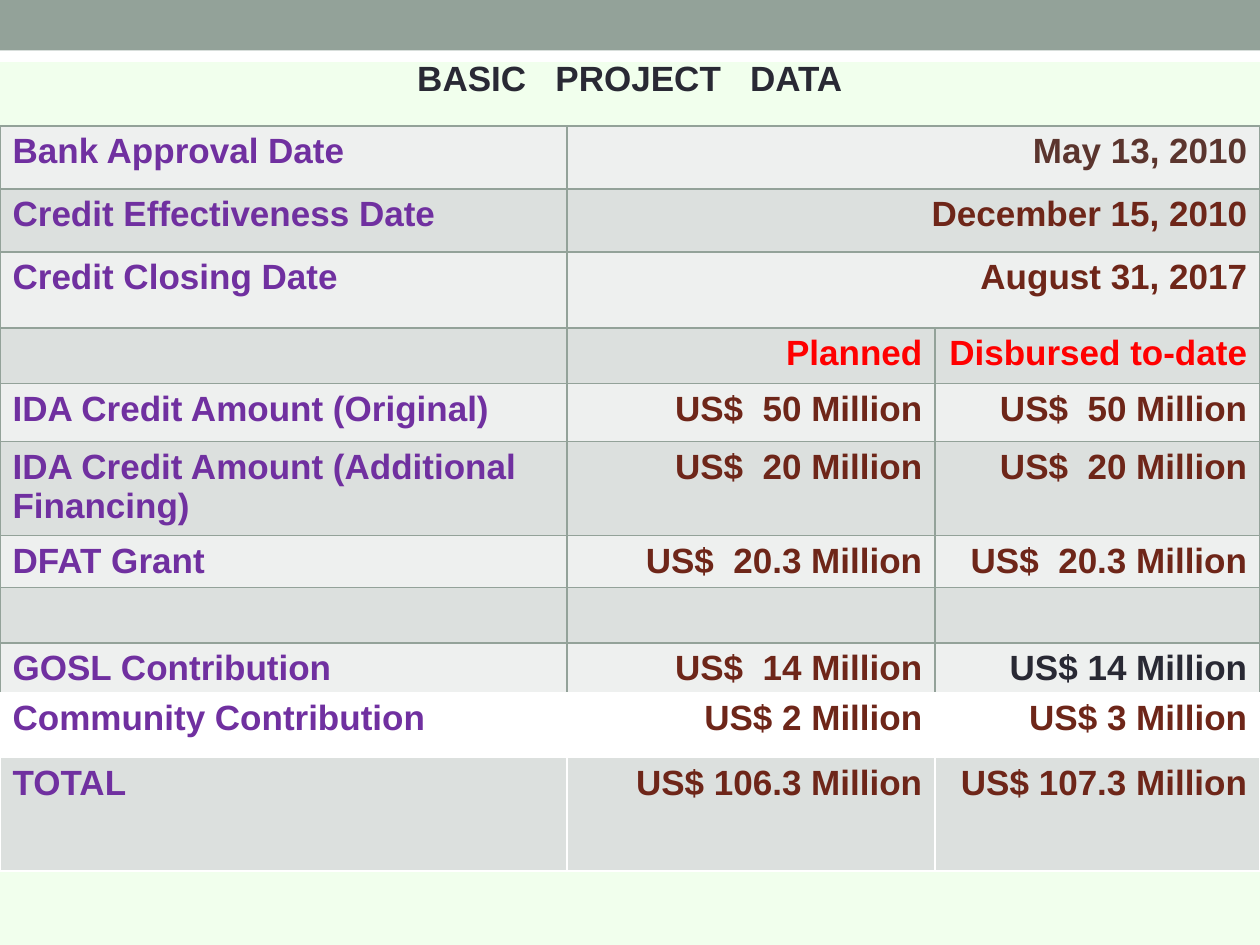
from dataclasses import dataclass

from lxml.etree import SubElement
from pptx import Presentation
from pptx.dml.color import RGBColor
from pptx.enum.shapes import MSO_SHAPE as Preset
from pptx.enum.text import PP_ALIGN as Align
from pptx.oxml.ns import qn
from pptx.slide import Slide
from pptx.util import Cm, Pt

PURPLE, BROWN, RED, INK = "7030A0", "6E2619", "FF0000", "292934"
SAGE, WHITE, LIGHT, DARK = "93A299", "FFFFFF", "EEF0EF", "DCE0DE"
PAGE_WIDTH, PAGE_HEIGHT = 25.4, 19.05
COLUMN_WIDTHS = (11.43, 7.42, 6.55)


@dataclass
class Row:
    height: float
    texts: tuple[str, ...]
    fill: str
    colors: tuple[str, ...] = (PURPLE, BROWN, BROWN)


@dataclass
class Band:
    top: float
    height: float
    color: str


BANDS = (Band(0.61, 0.64, WHITE), Band(0, 1.02, SAGE))

PROJECT_ROWS = (
    Row(1.27, ("Bank Approval Date", "May 13, 2010"), LIGHT, (PURPLE, "5B352E")),
    Row(1.27, ("Credit Effectiveness Date", "December 15, 2010"), DARK),
    Row(1.53, ("Credit Closing Date", "August 31, 2017"), LIGHT),
    Row(1.04, ("", "Planned", "Disbursed to-date"), DARK, (PURPLE, RED, RED)),
    Row(1.17, ("IDA Credit Amount (Original)", "US$  50 Million", "US$  50 Million"), LIGHT),
    Row(1.9, ("IDA Credit Amount (Additional Financing)", "US$  20 Million", "US$  20 Million"), DARK),
    Row(1.04, ("DFAT Grant", "US$  20.3 Million", "US$  20.3 Million"), LIGHT),
    Row(1.04, ("", "", ""), DARK),
    Row(2.08, ("GOSL Contribution", "US$  14 Million", "US$ 14 Million"), LIGHT, (PURPLE, BROWN, INK)),
)
TOTAL_ROWS = (
    Row(1.3, ("Community Contribution", "US$ 2 Million", "US$ 3 Million"), WHITE),
    Row(2.29, ("TOTAL", "US$ 106.3 Million", "US$ 107.3 Million"), DARK),
)


def paint(fill, color: str) -> None:
    fill.solid()
    fill.fore_color.rgb = RGBColor.from_string(color)


def write(text_frame, text: str, color: str, alignment: Align) -> None:
    text_frame.text = text
    para = text_frame.paragraphs[0]
    para.alignment = alignment
    para.font.size = Pt(20)
    for span in para.runs:
        span.font.name = "Arial"
        span.font.size = Pt(20)
        span.font.bold = True
        span.font.color.rgb = RGBColor.from_string(color)


def draw_band(page: Slide, band: Band) -> None:
    shape = page.shapes.add_shape(
        Preset.RECTANGLE, 0, Cm(band.top), Cm(PAGE_WIDTH), Cm(band.height))
    shape.shadow.inherit = False
    shape.line.fill.background()
    paint(shape.fill, band.color)


def draw_borders(cell, color: str) -> None:
    properties = cell._tc.get_or_add_tcPr()
    for side in ("a:lnL", "a:lnR", "a:lnT", "a:lnB"):
        line = SubElement(properties, qn(side), w=str(Pt(1)))
        solid = SubElement(line, qn("a:solidFill"))
        SubElement(solid, qn("a:srgbClr"), val=color)


def draw_table(page: Slide, top: float, rows: tuple[Row, ...], border: str) -> None:
    height = sum(row.height for row in rows)
    table = page.shapes.add_table(
        len(rows), len(COLUMN_WIDTHS), 0, Cm(top), Cm(PAGE_WIDTH), Cm(height)).table
    for column, width in zip(table.columns, COLUMN_WIDTHS):
        column.width = Cm(width)
    for index, row in enumerate(rows):
        table.rows[index].height = Cm(row.height)
        for cell in table.rows[index].cells:
            draw_borders(cell, border)
            paint(cell.fill, row.fill)
        if len(row.texts) == 2:
            table.cell(index, 1).merge(table.cell(index, 2))
        for position, (text, color) in enumerate(zip(row.texts, row.colors)):
            alignment = Align.RIGHT if position else Align.LEFT
            write(table.cell(index, position).text_frame, text, color, alignment)


def draw_title(page: Slide) -> None:
    box = page.shapes.add_textbox(Cm(4.34), Cm(1.02), Cm(16.72), Cm(1.11))
    box.text_frame.word_wrap = True
    write(box.text_frame, "BASIC   PROJECT   DATA", INK, Align.CENTER)


def main() -> None:
    deck = Presentation()
    deck.slide_width, deck.slide_height = Cm(PAGE_WIDTH), Cm(PAGE_HEIGHT)
    page = deck.slides.add_slide(deck.slide_layouts[6])
    paint(page.background.fill, "F1FFED")
    for band in BANDS:
        draw_band(page, band)
    draw_table(page, 2.54, PROJECT_ROWS, SAGE)
    draw_title(page)
    draw_table(page, 13.97, TOTAL_ROWS, WHITE)
    deck.save("out.pptx")


if __name__ == "__main__":
    main()
